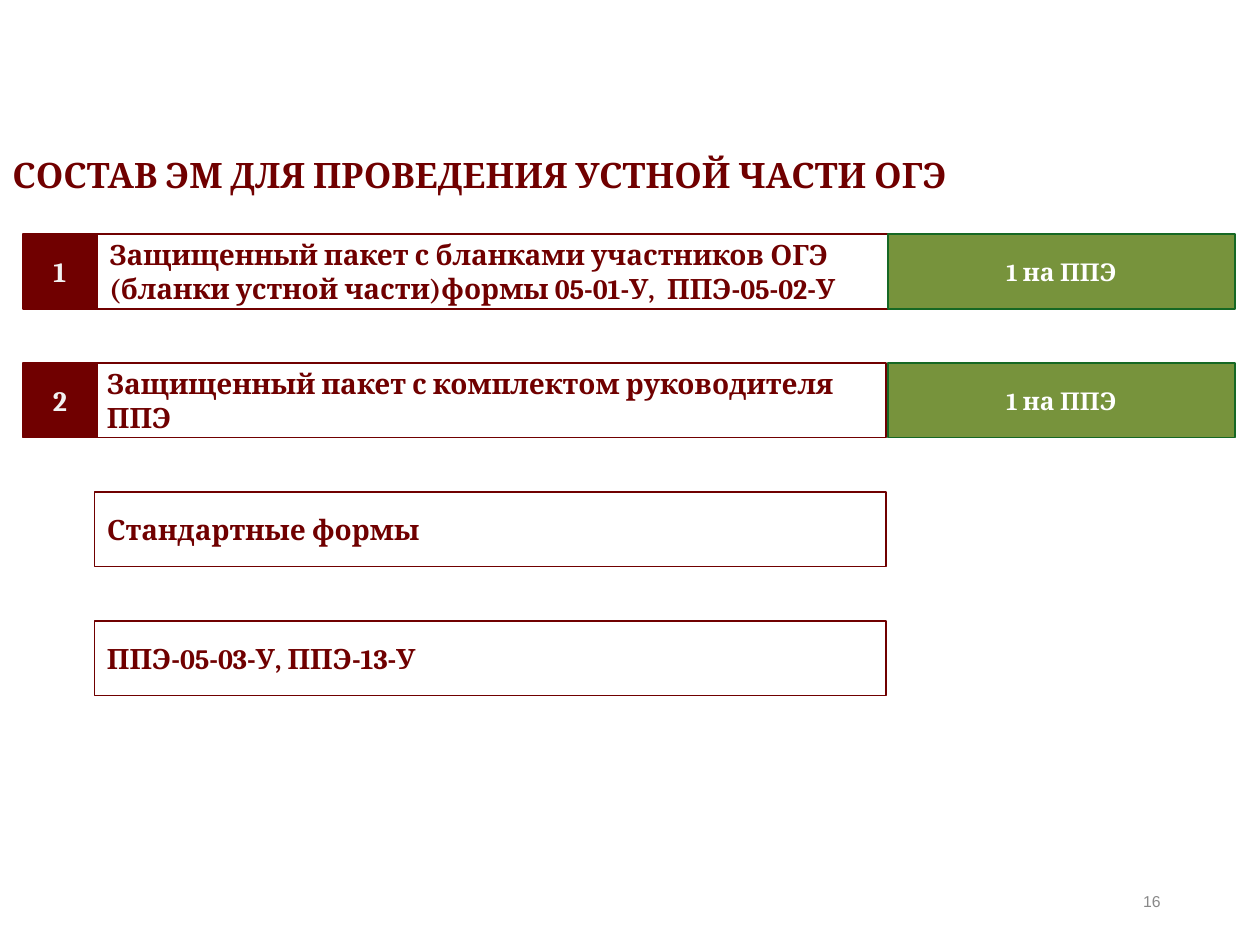
from pptx import Presentation
from pptx.dml.color import RGBColor
from pptx.enum.shapes import MSO_SHAPE
from pptx.enum.text import MSO_ANCHOR, PP_ALIGN
from pptx.util import Inches, Pt

RECT = MSO_SHAPE.RECTANGLE
TOP, MIDDLE = MSO_ANCHOR.TOP, MSO_ANCHOR.MIDDLE
LEFT, CENTER, RIGHT = PP_ALIGN.LEFT, PP_ALIGN.CENTER, PP_ALIGN.RIGHT

MAROON, GREEN, DARK_GREEN = "700000", "77933C", "166824"
TITLE = {"name": "Cambria", "size": Pt(20), "bold": True, "color": MAROON}
ITEM = {**TITLE, "size": Pt(16)}
NUMBER = {**ITEM, "color": "F2F2F2"}
COUNT = {**ITEM, "size": Pt(14), "color": "FFFFFF"}
PAGE = {"name": "Arial", "size": Pt(9), "bold": False, "color": "898989"}

ROW_LEFT, ROW_WIDTH, ROW_HEIGHT = 0.18, 9.62, 0.59
COUNT_WIDTH, ITEM_WIDTH = 2.75, 6.28
FIRST_TOP, LAST_TOP = 1.86, 4.93
ROWS = [
    ("1", "Защищенный пакет с бланками участников ОГЭ "
     "(бланки устной части)формы 05-01-У,  ППЭ-05-02-У", "1 на ППЭ", 0.77),
    ("2", "Защищенный пакет с комплектом руководителя ППЭ", "1 на ППЭ", 0.75),
    (None, "Стандартные формы", None, 0.75),
    (None, "ППЭ-05-03-У, ППЭ-13-У", None, 0.75),
]


def rgb(value):
    """Return the colour for a hex string."""
    return RGBColor.from_string(value)


def write(sp, text, style, align, anchor):
    """Put one formatted paragraph into a shape."""
    tf = sp.text_frame
    tf.word_wrap = True
    tf.vertical_anchor = anchor
    p = tf.paragraphs[0]
    p.alignment = align
    r = p.add_run()
    r.text = text
    for name, value in style.items():
        if name == "color":
            r.font.color.rgb = rgb(value)
        else:
            setattr(r.font, name, value)


def add_label(slide, box, text, style, align=LEFT, anchor=TOP):
    """Add a text box."""
    sp = slide.shapes.add_textbox(*map(Inches, box))
    write(sp, text, style, align, anchor)


def add_box(slide, box, text, style, fill=None, line=MAROON, align=CENTER):
    """Add an outlined rectangle with vertically centred text."""
    sp = slide.shapes.add_shape(RECT, *map(Inches, box))
    sp.shadow.inherit = False
    if fill:
        sp.fill.solid()
        sp.fill.fore_color.rgb = rgb(fill)
    else:
        sp.fill.background()
    sp.line.color.rgb = rgb(line)
    sp.line.width = Pt(1)
    write(sp, text, style, align, MIDDLE)


def add_row(slide, box, number, item, count, item_left):
    """Add an item with its optional number and count cells."""
    left, top, width, height = box
    add_box(slide, (item_left, top, ITEM_WIDTH, height), item, ITEM, align=LEFT)
    if number:
        add_box(slide, (left, top, height, height), number, NUMBER, MAROON)
    if count:
        count_left = left + width - COUNT_WIDTH
        add_box(slide, (count_left, top, COUNT_WIDTH, height), count, COUNT,
                GREEN, DARK_GREEN)


def main():
    """Build and save the slide."""
    prs = Presentation()
    prs.slide_width, prs.slide_height = Inches(10), Inches(7.5)
    slide = prs.slides.add_slide(prs.slide_layouts[6])
    add_label(slide, (0, 1.17, 10, 0.44),
              "СОСТАВ ЭМ ДЛЯ ПРОВЕДЕНИЯ УСТНОЙ ЧАСТИ ОГЭ", TITLE)
    pitch = (LAST_TOP - FIRST_TOP) / (len(ROWS) - 1)
    for i, row in enumerate(ROWS):
        box = (ROW_LEFT, FIRST_TOP + i * pitch, ROW_WIDTH, ROW_HEIGHT)
        add_row(slide, box, *row)
    add_label(slide, (7.06, 6.95, 2.25, 0.4), "16", PAGE, RIGHT, MIDDLE)
    prs.save("out.pptx")


if __name__ == "__main__":
    main()
